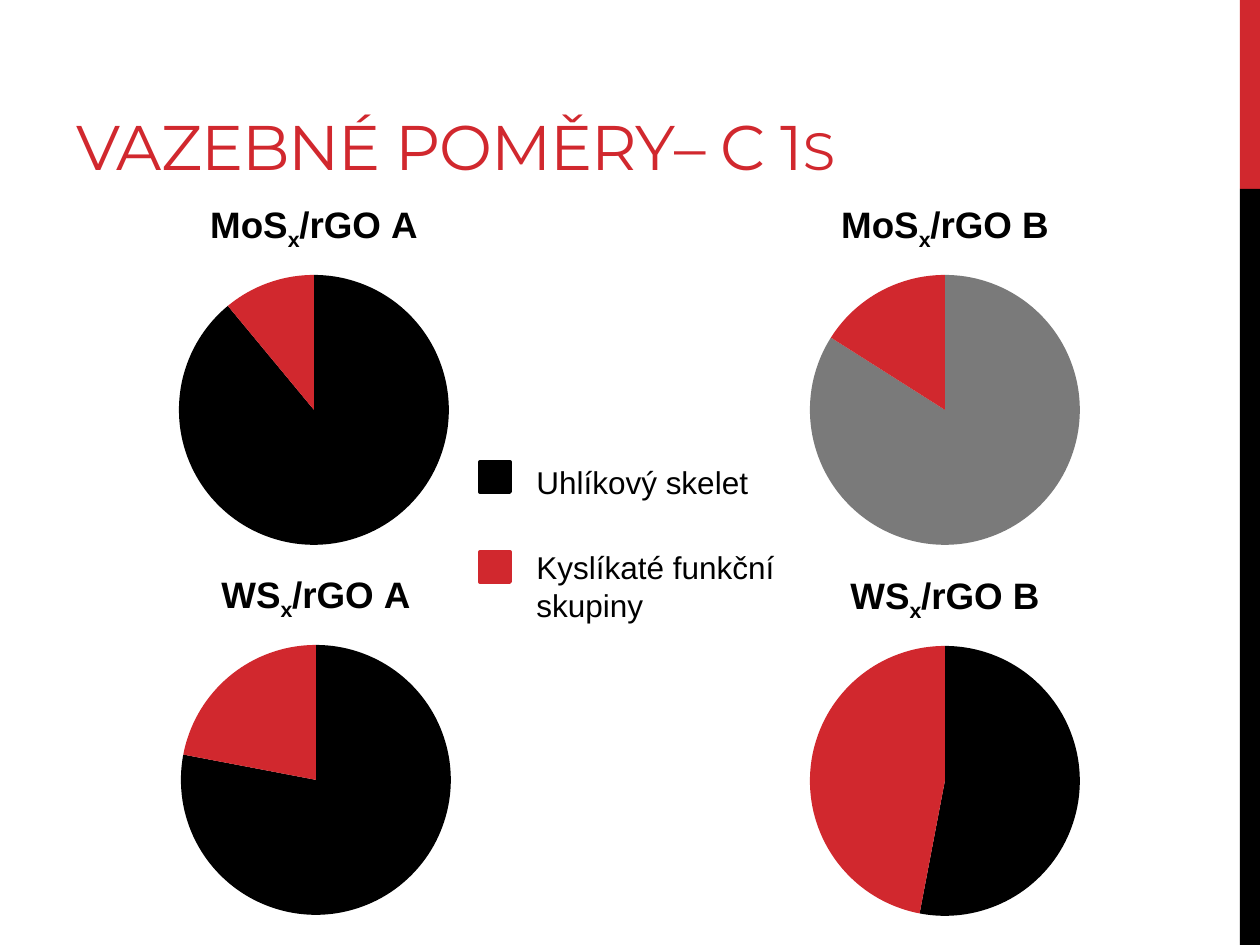
from dataclasses import dataclass

from lxml import etree
from pptx import Presentation
from pptx import util as u
from pptx.chart.data import CategoryChartData
from pptx.dml.color import RGBColor
from pptx.enum import chart as charts, shapes, text
from pptx.oxml import parse_xml
from pptx.oxml.ns import nsdecls

PX = u.Inches(1) // 126
RED = RGBColor(0xD1, 0x28, 0x2E)
BLACK = RGBColor(0, 0, 0)
GRAY = RGBColor(0x7A, 0x7A, 0x7A)
CHART_WIDTH, CHART_HEIGHT = 630, 378
PIE_TOP, PIE_DIAMETER = 90, 270


@dataclass
class Pie:
    left: int
    top: int
    compound: str
    sample: str
    skeleton: int
    color: RGBColor = BLACK

    @property
    def name(self) -> str:
        return f"{self.compound}x/rGO {self.sample}"


@dataclass
class LegendEntry:
    marker_top: int
    text_top: int
    width: int
    height: int
    lines: tuple[str, ...]
    color: RGBColor


PIES = [
    Pie(-1, 185, "MoS", "A", 89),
    Pie(630, 185, "MoS", "B", 84, GRAY),
    Pie(1, 555, "WS", "A", 78),
    Pie(630, 556, "WS", "B", 53),
]
LEGEND = [
    LegendEntry(462, 457, 239, 50, ("Uhlíkový skelet",), BLACK),
    LegendEntry(552, 542, 266, 89, ("Kyslíkaté funkční", "skupiny"), RED),
]


def add_run(paragraph, content: str, *, size: float, font="Arial", color=BLACK,
            bold=False, spacing=0, baseline=0):
    run = paragraph.add_run()
    run.text = content
    run.font.size = u.Pt(size)
    run.font.name = font
    run.font.bold = bold
    run.font.color.rgb = color
    properties = run._r.get_or_add_rPr()
    if spacing:
        properties.set("spc", str(spacing))
    if baseline:
        properties.set("baseline", str(baseline))


def add_text_box(slide, left: int, top: int, width: int, height: int, *,
                 anchor=text.MSO_ANCHOR.TOP, wrap=False):
    box = slide.shapes.add_textbox(left * PX, top * PX, width * PX, height * PX)
    box.text_frame.word_wrap = wrap
    box.text_frame.vertical_anchor = anchor
    return box.text_frame


def add_rectangle(slide, left: int, top: int, width: int, height: int,
                  color: RGBColor, line_width: float = 0):
    shape = slide.shapes.add_shape(shapes.MSO_SHAPE.RECTANGLE, left * PX, top * PX,
                                   width * PX, height * PX)
    shape.shadow.inherit = False
    shape.fill.solid()
    shape.fill.fore_color.rgb = color
    if line_width:
        shape.line.color.rgb = color
        shape.line.width = u.Pt(line_width)
    else:
        shape.line.fill.background()


def place_plot(chart):
    plot_area = chart._chartSpace.chart.plotArea
    for layout in plot_area.findall("{*}layout"):
        plot_area.remove(layout)
    width, height = PIE_DIAMETER / CHART_WIDTH, PIE_DIAMETER / CHART_HEIGHT
    layout = parse_xml(
        f'<c:layout {nsdecls("c")}><c:manualLayout><c:layoutTarget val="inner"/>'
        '<c:xMode val="edge"/><c:yMode val="edge"/></c:manualLayout></c:layout>')
    values = {"x": (1 - width) / 2, "y": PIE_TOP / CHART_HEIGHT, "w": width, "h": height}
    for name, value in values.items():
        namespace = etree.QName(layout).namespace
        etree.SubElement(layout[0], f"{{{namespace}}}{name}").set("val", f"{value:.4f}")
    plot_area.insert(0, layout)


def add_pie(slide, pie: Pie):
    data = CategoryChartData()
    data.categories = ["1", "2"]
    data.add_series(pie.name, (pie.skeleton, 100 - pie.skeleton))
    chart = slide.shapes.add_chart(
        charts.XL_CHART_TYPE.PIE, pie.left * PX, pie.top * PX,
        CHART_WIDTH * PX, CHART_HEIGHT * PX, data).chart
    chart.has_legend = False
    chart.font.name = "Arial"
    chart.font.size = u.Pt(18)
    chart.font.color.rgb = BLACK
    chart.has_title = True
    paragraph = chart.chart_title.text_frame.paragraphs[0]
    add_run(paragraph, pie.compound, size=21, bold=True)
    add_run(paragraph, "x", size=21, bold=True, baseline=-25000)
    add_run(paragraph, f"/rGO {pie.sample}", size=21, bold=True)
    plot = chart.plots[0]
    plot.vary_by_categories = True
    for index, color in enumerate((pie.color, RED)):
        point = plot.series[0].points[index]
        point.format.fill.solid()
        point.format.fill.fore_color.rgb = color
        point.format.line.fill.background()
    place_plot(chart)


def add_legend_entry(slide, entry: LegendEntry):
    add_rectangle(slide, 480, entry.marker_top, 30, 30, entry.color, 2.25)
    frame = add_text_box(slide, 524, entry.text_top, entry.width, entry.height)
    frame.auto_size = text.MSO_AUTO_SIZE.SHAPE_TO_FIT_TEXT
    for index, line in enumerate(entry.lines):
        paragraph = frame.add_paragraph() if index else frame.paragraphs[0]
        add_run(paragraph, line, size=18)


def main():
    presentation = Presentation()
    presentation.slide_width = 1260 * PX
    presentation.slide_height = 945 * PX
    slide = presentation.slides.add_slide(presentation.slide_layouts[6])
    add_rectangle(slide, 1240, 0, 20, 189, RED)
    add_rectangle(slide, 1240, 189, 20, 756, BLACK)
    title = add_text_box(slide, 64, 0, 1399, 189, anchor=text.MSO_ANCHOR.BOTTOM, wrap=True)
    for content, size in (("VAZEBNÉ POMĚRY– C 1", 36), ("S", 30)):
        add_run(title.paragraphs[0], content, size=size, font="Montserrat",
                color=RED, spacing=-60)
    for pie in PIES:
        add_pie(slide, pie)
    for entry in LEGEND:
        add_legend_entry(slide, entry)
    presentation.save("out.pptx")


if __name__ == "__main__":
    main()
